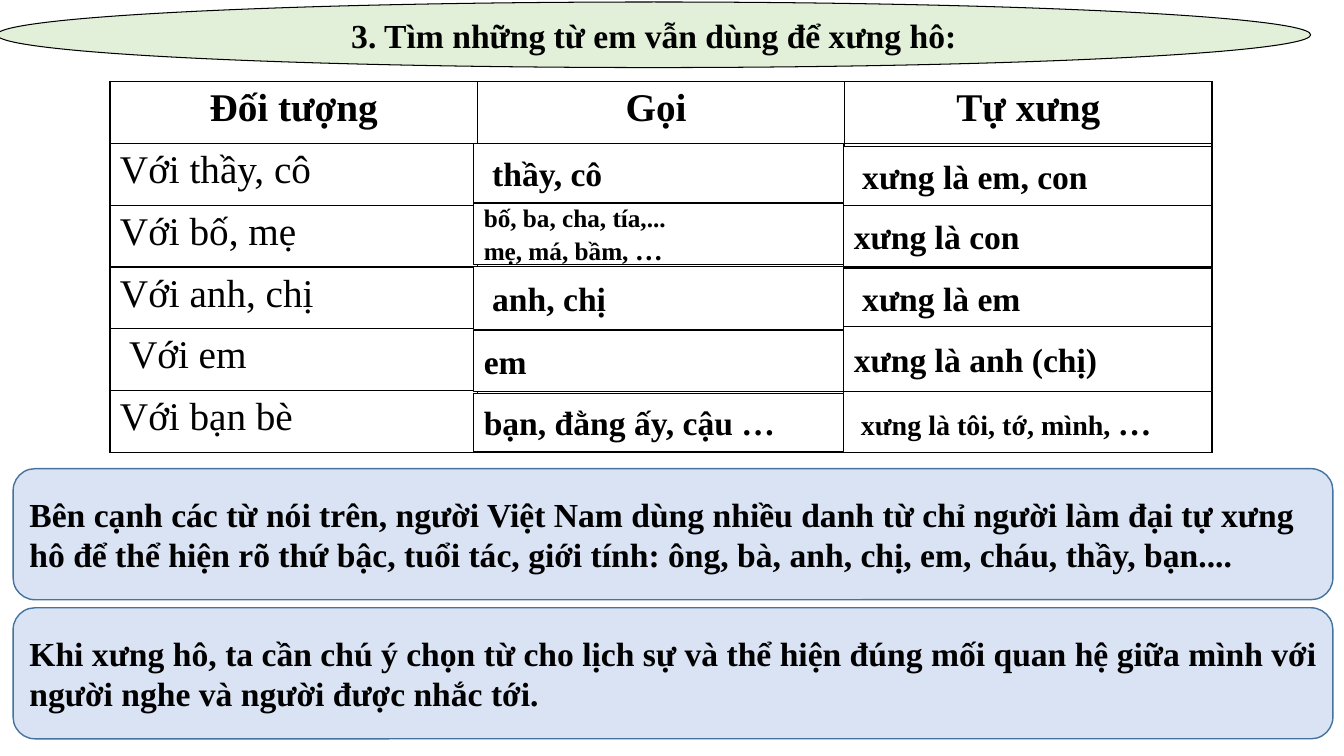
from lxml import etree
from pptx import Presentation
from pptx.dml.color import RGBColor
from pptx.enum.shapes import MSO_SHAPE
from pptx.enum.text import MSO_ANCHOR, MSO_AUTO_SIZE, PP_ALIGN
from pptx.oxml.ns import qn
from pptx.util import Inches, Pt

ELLIPSE, RECTANGLE, ROUNDED = MSO_SHAPE.OVAL, MSO_SHAPE.RECTANGLE, MSO_SHAPE.ROUNDED_RECTANGLE
LEFT, CENTER, JUSTIFY = PP_ALIGN.LEFT, PP_ALIGN.CENTER, PP_ALIGN.JUSTIFY
MIDDLE = MSO_ANCHOR.MIDDLE
NO_AUTOFIT = MSO_AUTO_SIZE.NONE

BLACK = RGBColor(0x00, 0x00, 0x00)
WHITE = RGBColor(0xFF, 0xFF, 0xFF)
PALE_GREEN = RGBColor(0xE2, 0xF0, 0xD9)
PALE_BLUE = RGBColor(0xDA, 0xE3, 0xF3)
BLUE = RGBColor(0x43, 0x73, 0x9E)

TITLE = "3. Tìm những từ em vẫn dùng để xưng hô:"
TITLE_BOX = (-0.03, 0.02, 13.03, 0.65)
HEADERS = ["Đối tượng", "Gọi ", "Tự xưng"]
PEOPLE = ["Với thầy, cô", "Với bố, mẹ", "Với anh, chị", " Với em", "Với bạn bè"]

# Each answer: top, height, paragraphs made of (text, size) runs
SELF_ANSWERS = [
    (1.45, 0.59, [[(" xưng là em, con", 24)]]),
    (2.04, 0.60, [[("xưng là con", 24)]]),
    (2.66, 0.59, [[(" xưng là em", 24)]]),
    (3.24, 0.64, [[("xưng là anh (chị)", 24)]]),
    (3.88, 0.61, [[(" xưng là tôi, tớ, mình, ", 20), ("…", 24)]]),
]
CALL_ANSWERS = [
    (1.42, 0.59, [[(" thầy, cô", 24)]]),
    (2.02, 0.60, [[("bố, ba, cha, tía,...", 18)], [("mẹ, má, bầm, ", 18), ("…", 20)]]),
    (2.64, 0.63, [[(" anh, chị", 24)]]),
    (3.28, 0.60, [[("em", 24)]]),
    (3.90, 0.58, [[("bạn, đằng ấy, cậu …", 24)]]),
]
ANSWER_COLUMNS = [(8.37, 3.65, SELF_ANSWERS), (4.70, 3.67, CALL_ANSWERS)]

NOTES = [
    (4.65, LEFT, "Bên cạnh các từ nói trên, người Việt Nam dùng nhiều danh từ chỉ người "
     "làm đại tự xưng hô để thể hiện rõ thứ bậc, tuổi tác, giới tính: ông, bà, anh, chị, "
     "em, cháu, thầy, bạn...."),
    (6.03, JUSTIFY, "Khi xưng hô, ta cần chú ý chọn từ cho lịch sự và thể hiện đúng mối "
     "quan hệ giữa mình với người nghe và người được nhắc tới."),
]


class SlideBuilder:
    font_name = "Times New Roman"

    def __init__(self, slide):
        self.slide = slide

    def style(self, paragraph, size, bold=True, align=LEFT):
        paragraph.alignment = align
        font = paragraph.font
        font.name, font.size, font.bold = self.font_name, Pt(size), bold
        font.color.rgb = BLACK

    def shape(self, kind, box, fill, line, line_width):
        shape = self.slide.shapes.add_shape(kind, *map(Inches, box))
        shape.shadow.inherit = False
        shape.fill.solid()
        shape.fill.fore_color.rgb = fill
        shape.line.color.rgb = line
        shape.line.width = Pt(line_width)
        return shape

    def text(self, shape, paragraphs, align=LEFT):
        """Fill a shape with paragraphs, each a list of (text, size) runs."""
        frame = shape.text_frame
        frame.word_wrap = True
        frame.auto_size = NO_AUTOFIT
        frame.vertical_anchor = MIDDLE
        for index, runs in enumerate(paragraphs):
            paragraph = frame.add_paragraph() if index else frame.paragraphs[0]
            base_size = runs[0][1]
            self.style(paragraph, base_size, align=align)
            for text, size in runs:
                run = paragraph.add_run()
                run.text = text
                if size != base_size:
                    run.font.size = Pt(size)

    def title(self, text, box):
        title = self.slide.shapes.title
        title.left, title.top, title.width, title.height = map(Inches, box)
        self.text(title, [[(text, 24)]], CENTER)
        ellipse = self.shape(ELLIPSE, box, PALE_GREEN, BLACK, 0.75)
        title._element.addprevious(ellipse._element)

    def border(self, cell):
        properties = cell._tc.get_or_add_tcPr()
        for side in ("a:lnL", "a:lnR", "a:lnT", "a:lnB"):
            line = etree.SubElement(properties, qn(side), w=str(Pt(1)))
            fill = etree.SubElement(line, qn("a:solidFill"))
            etree.SubElement(fill, qn("a:srgbClr"), val=str(BLACK))

    def table(self, rows, box):
        table = self.slide.shapes.add_table(
            len(rows), len(rows[0]), *map(Inches, box)).table
        for row_index, row in enumerate(rows):
            header = row_index == 0
            for column_index, text in enumerate(row):
                cell = table.cell(row_index, column_index)
                self.border(cell)
                cell.fill.solid()
                cell.fill.fore_color.rgb = WHITE
                cell.text = text
                self.style(cell.text_frame.paragraphs[0], 28, header,
                           CENTER if header else LEFT)


def main():
    presentation = Presentation()
    presentation.slide_width = Inches(13.33)
    presentation.slide_height = Inches(7.5)
    builder = SlideBuilder(presentation.slides.add_slide(presentation.slide_layouts[5]))

    builder.title(TITLE, TITLE_BOX)
    for top, align, text in NOTES:
        note = builder.shape(ROUNDED, (0.13, top, 13.09, 1.3), PALE_BLUE, BLUE, 1)
        builder.text(note, [[(text, 24)]], align)

    rows = [HEADERS] + [[person, "", ""] for person in PEOPLE]
    builder.table(rows, (1.09, 0.81, 10.93, 3.68))
    for left, width, answers in ANSWER_COLUMNS:
        for top, height, paragraphs in answers:
            answer = builder.shape(RECTANGLE, (left, top, width, height), WHITE, BLACK, 0.75)
            builder.text(answer, paragraphs)

    presentation.save("out.pptx")


if __name__ == "__main__":
    main()
